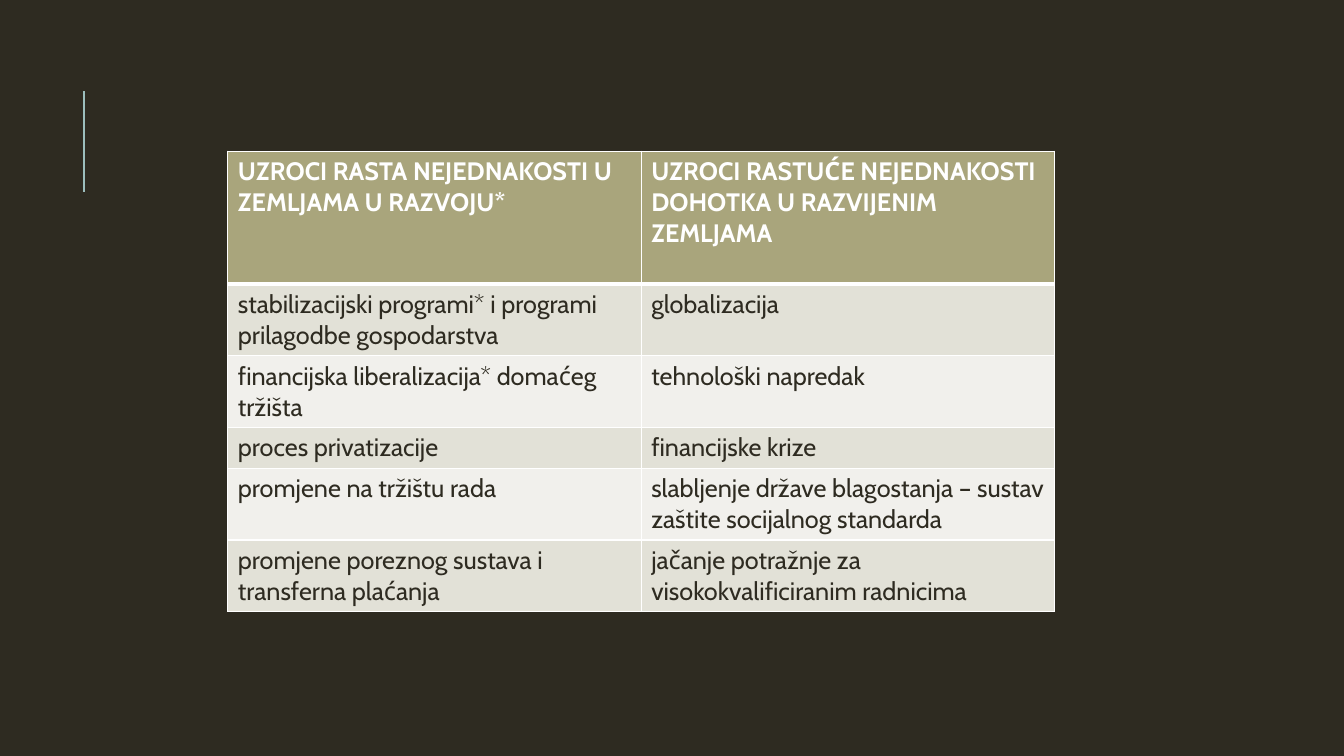
from pptx import Presentation
from pptx.dml.color import RGBColor as RGB
from pptx.enum.shapes import MSO_CONNECTOR as CONN
from pptx.oxml import parse_xml
from pptx.oxml.ns import nsdecls
from pptx.util import Inches, Pt

THEME = {
    "font": "Cabin", "size": 18, "thin": 1, "thick": 3, "rule": 1.5,
    "back": "2E2B21", "accent": "9CBEBD", "border": "FFFFFF",
    "head": "A9A57C", "bands": ("F1F0EC", "E2E1D7"),
    "head_text": "FFFFFF", "body_text": "2E2B21",
}
ROWS = [
    ("UZROCI RASTA NEJEDNAKOSTI U ZEMLJAMA U RAZVOJU*",
     "UZROCI RASTUĆE NEJEDNAKOSTI DOHOTKA U RAZVIJENIM ZEMLJAMA"),
    ("stabilizacijski programi* i programi prilagodbe gospodarstva", "globalizacija"),
    ("financijska liberalizacija* domaćeg tržišta", "tehnološki napredak"),
    ("proces privatizacije", "financijske krize"),
    ("promjene na tržištu rada",
     "slabljenje države blagostanja – sustav zaštite socijalnog standarda"),
    ("promjene poreznog sustava i transferna plaćanja",
     "jačanje potražnje za visokokvalificiranim radnicima"),
]
ONE_LINE, TWO_LINES, HEAD = 0.4, 0.71, 1.32
HEIGHTS = [HEAD, TWO_LINES, TWO_LINES, ONE_LINE, TWO_LINES, TWO_LINES]
COL_W = 4.1


def add_border(cell, side, width):
    cell._tc.get_or_add_tcPr().append(parse_xml(
        f'<a:{side} {nsdecls("a")} w="{Pt(width)}"><a:solidFill>'
        f'<a:srgbClr val="{THEME["border"]}"/></a:solidFill></a:{side}>'))


prs = Presentation()
prs.slide_width, prs.slide_height = Inches(13.33), Inches(7.5)
s = prs.slides.add_slide(prs.slide_layouts[6])
s.background.fill.solid()
s.background.fill.fore_color.rgb = RGB.from_string(THEME["back"])

rule = s.shapes.add_connector(
    CONN.STRAIGHT, Inches(0.83), Inches(1.9), Inches(0.83), Inches(0.9))
rule.line.color.rgb = RGB.from_string(THEME["accent"])
rule.line.width = Pt(THEME["rule"])
rule._element.spPr.append(parse_xml(f'<a:effectLst {nsdecls("a")}/>'))

table = s.shapes.add_table(
    len(ROWS), 2, Inches(2.26), Inches(1.5),
    Inches(2 * COL_W), Inches(sum(HEIGHTS))).table
for col in table.columns:
    col.width = Inches(COL_W)

for i, (texts, height) in enumerate(zip(ROWS, HEIGHTS)):
    table.rows[i].height = Inches(height)
    is_head = i == 0
    fill = THEME["head"] if is_head else THEME["bands"][i % 2]
    color = THEME["head_text"] if is_head else THEME["body_text"]
    widths = {
        "lnL": THEME["thin"], "lnR": THEME["thin"],
        "lnT": THEME["thick"] if i == 1 else THEME["thin"],
        "lnB": THEME["thick"] if is_head else THEME["thin"],
    }
    font = {"name": THEME["font"], "size": Pt(THEME["size"]), "bold": is_head}
    for j, text in enumerate(texts):
        cell = table.cell(i, j)
        for side, width in widths.items():
            add_border(cell, side, width)
        cell.fill.solid()
        cell.fill.fore_color.rgb = RGB.from_string(fill)
        r = cell.text_frame.paragraphs[0].add_run()
        r.text = text
        for name, value in font.items():
            setattr(r.font, name, value)
        r.font.color.rgb = RGB.from_string(color)

prs.save("out.pptx")
